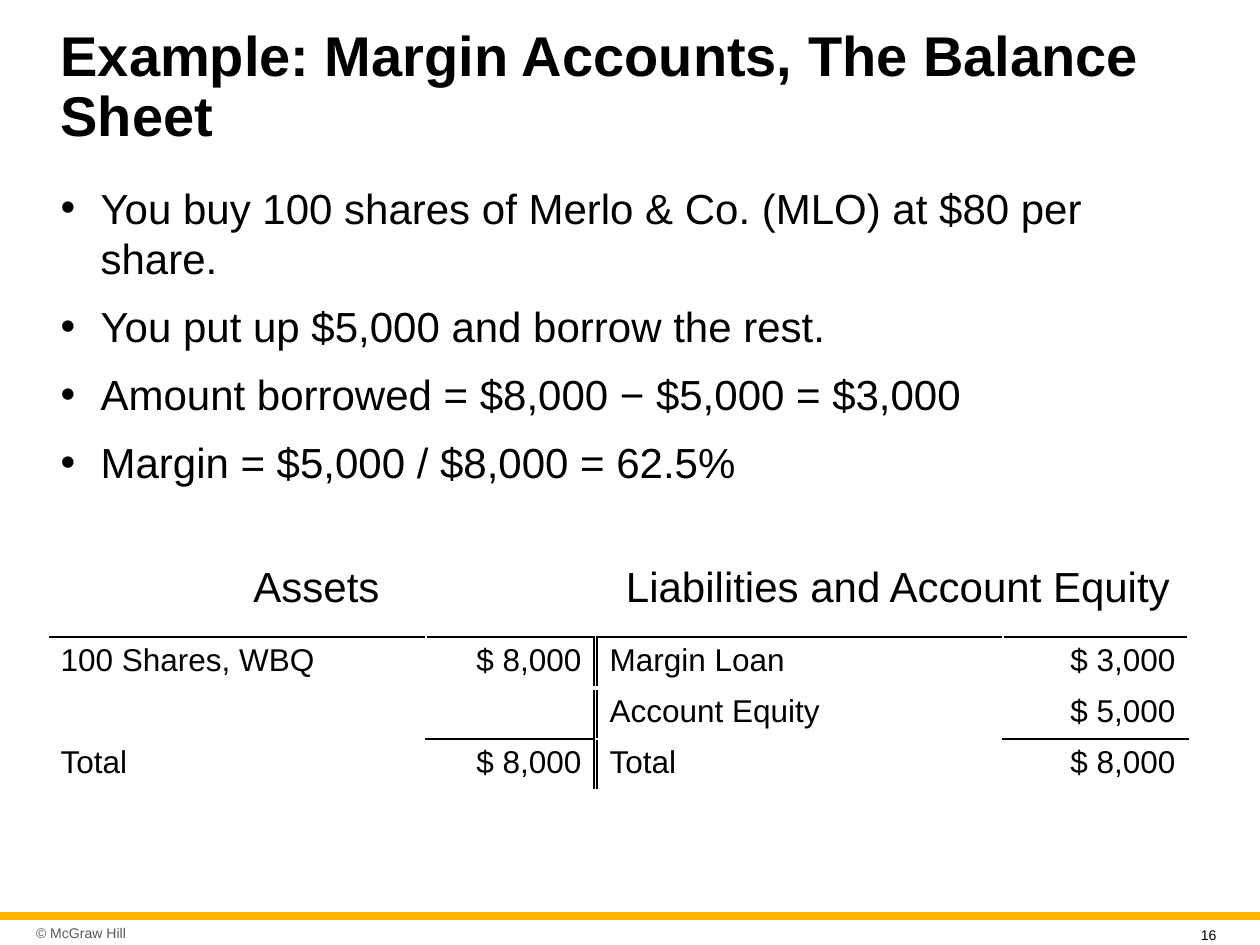
import dataclasses
import typing

import lxml.etree
import pptx
import pptx.dml.color
import pptx.enum.shapes
import pptx.enum.text
import pptx.oxml.ns
import pptx.util

PX_PER_INCH = 126
BLACK, WHITE, GOLD, GREY = "000000", "FFFFFF", "FFB600", "595959"
ALIGN = pptx.enum.text.PP_ALIGN
ANCHOR = pptx.enum.text.MSO_ANCHOR
ROW_HEIGHT = 51


@dataclasses.dataclass(frozen=True)
class Box:
    left: int
    top: int
    width: int
    height: int

    def emu(self) -> list[int]:
        return [px(n) for n in (self.left, self.top, self.width, self.height)]


@dataclasses.dataclass(frozen=True)
class TextStyle:
    size: int
    color: str = BLACK
    bold: bool = False
    align: ALIGN = ALIGN.LEFT
    anchor: ANCHOR = ANCHOR.TOP
    line_spacing: float = 1.0
    bulleted: bool = False


@dataclasses.dataclass(frozen=True)
class Account:
    """One side of the balance sheet; ruled_side is the edge facing the other side."""
    heading: str
    heading_box: Box
    heading_idx: int
    left: int
    column_widths: tuple[int, int]
    ruled_side: str
    rows: tuple[tuple[str, str], ...]


TITLE = "Example: Margin Accounts, The Balance Sheet"
POINTS = [
    "You buy 100 shares of Merlo & Co. (MLO) at $80 per share.",
    "You put up $5,000 and borrow the rest.",
    "Amount borrowed = $8,000 − $5,000 = $3,000",
    "Margin = $5,000 / $8,000 = 62.5%",
]
ACCOUNTS = [
    Account("Assets", Box(48, 554, 537, 64), 1, 48, (378, 168), "R",
            (("100 Shares, WBQ", "$ 8,000"), ("", ""), ("Total", "$ 8,000"))),
    Account("Liabilities and Account Equity", Box(602, 554, 592, 64), 3, 597, (406, 185), "L",
            (("Margin Loan", "$ 3,000"), ("Account Equity", "$ 5,000"), ("Total", "$ 8,000"))),
]


def px(length: int) -> int:
    return round(length * pptx.util.Inches(1) / PX_PER_INCH)


def rgb(color: str) -> pptx.dml.color.RGBColor:
    return pptx.dml.color.RGBColor.from_string(color)


def place(shape: typing.Any, box: Box) -> None:
    shape.left, shape.top, shape.width, shape.height = box.emu()


def add_bullet(paragraph: typing.Any) -> None:
    properties = paragraph._p.get_or_add_pPr()
    properties.set("marL", str(px(40)))
    properties.set("indent", str(-px(40)))
    for tag, name, value in (("a:buFont", "typeface", "Arial"), ("a:buChar", "char", "•")):
        lxml.etree.SubElement(properties, pptx.oxml.ns.qn(tag)).set(name, value)


def style_paragraph(paragraph: typing.Any, style: TextStyle) -> None:
    paragraph.alignment = style.align
    font = paragraph.font
    font.name, font.size, font.bold = "Arial", pptx.util.Pt(style.size), style.bold
    font.color.rgb = rgb(style.color)


def write(frame: typing.Any, lines: list[str], style: TextStyle) -> None:
    frame.word_wrap = True
    frame.auto_size = pptx.enum.text.MSO_AUTO_SIZE.NONE
    frame.vertical_anchor = style.anchor
    for number, line in enumerate(lines):
        paragraph = frame.add_paragraph() if number else frame.paragraphs[0]
        paragraph.text = line
        paragraph.line_spacing = style.line_spacing
        paragraph.space_before = pptx.util.Pt(10 if number else 0)
        if style.bulleted:
            add_bullet(paragraph)
        style_paragraph(paragraph, style)


def fill_placeholder(shape: typing.Any, box: Box, lines: list[str], style: TextStyle) -> None:
    place(shape, box)
    write(shape.text_frame, lines, style)


def add_label(slide: typing.Any, box: Box, text: str, style: TextStyle, margin: int) -> None:
    frame = slide.shapes.add_textbox(*box.emu()).text_frame
    frame.margin_left = frame.margin_right = px(margin)
    write(frame, [text], style)


def set_borders(cell: typing.Any, borders: dict[str, tuple[str, int]]) -> None:
    """Draw the cell's edges; borders maps L, R, T and B to colour and points."""
    properties = cell._tc.get_or_add_tcPr()
    for position, side in enumerate("LRTB"):
        color, width = borders[side]
        line = lxml.etree.Element(pptx.oxml.ns.qn(f"a:ln{side}"), w=str(pptx.util.Pt(width)))
        solid = lxml.etree.SubElement(line, pptx.oxml.ns.qn("a:solidFill"))
        lxml.etree.SubElement(solid, pptx.oxml.ns.qn("a:srgbClr"), val=color)
        properties.insert(position, line)


def cell_borders(row: int, column: int, ruled_side: str) -> dict[str, tuple[str, int]]:
    borders = dict.fromkeys("LRTB", (WHITE, 1))
    if row == 0:
        borders.update(T=(BLACK, 1), B=(WHITE, 3))
    if row == 1:
        borders["T"] = (WHITE, 3 if column == 0 else 1)
    if column == 1 and row > 0:
        borders["B" if row == 1 else "T"] = (BLACK, 1)
    if column == "LR".index(ruled_side):
        borders[ruled_side] = (BLACK, 1)
    return borders


def add_account(slide: typing.Any, account: Account) -> None:
    fill_placeholder(slide.placeholders[account.heading_idx], account.heading_box,
                     [account.heading], TextStyle(24, align=ALIGN.CENTER))
    box = Box(account.left, 637, sum(account.column_widths), ROW_HEIGHT * len(account.rows))
    table = slide.shapes.add_table(len(account.rows), 2, *box.emu()).table
    table.first_row = table.horz_banding = False
    for column, width in zip(table.columns, account.column_widths):
        column.width = px(width)
    for r, entries in enumerate(account.rows):
        table.rows[r].height = px(ROW_HEIGHT)
        for c, entry in enumerate(entries):
            cell = table.cell(r, c)
            cell.text = entry
            style_paragraph(cell.text_frame.paragraphs[0],
                            TextStyle(18, align=ALIGN.RIGHT if c else ALIGN.LEFT))
            cell.fill.solid()
            cell.fill.fore_color.rgb = rgb(WHITE)
            set_borders(cell, cell_borders(r, c, account.ruled_side))


def add_footer(slide: typing.Any) -> None:
    rule = slide.shapes.add_shape(pptx.enum.shapes.MSO_SHAPE.RECTANGLE,
                                  *Box(0, 912, 1260, 8).emu())
    rule.shadow.inherit = False
    rule.fill.solid()
    rule.fill.fore_color.rgb = rgb(GOLD)
    rule.line.fill.background()
    add_label(slide, Box(30, 918, 170, 30), "© McGraw Hill",
              TextStyle(8, GREY, anchor=ANCHOR.MIDDLE), 6)
    add_label(slide, Box(1188, 920, 49, 23), "16", TextStyle(8), 13)


def main() -> None:
    deck = pptx.Presentation()
    deck.slide_width, deck.slide_height = px(1260), px(945)
    slide = deck.slides.add_slide(deck.slide_layouts.get_by_name("Comparison"))
    spare = slide.placeholders[4].element
    spare.getparent().remove(spare)

    add_footer(slide)
    fill_placeholder(slide.shapes.title, Box(48, 26, 1166, 125), [TITLE],
                     TextStyle(32, bold=True, anchor=ANCHOR.MIDDLE, line_spacing=0.9))
    fill_placeholder(slide.placeholders[2], Box(48, 176, 1166, 319), POINTS,
                     TextStyle(24, bulleted=True))
    for account in ACCOUNTS:
        add_account(slide, account)
    deck.save("out.pptx")


if __name__ == "__main__":
    main()
